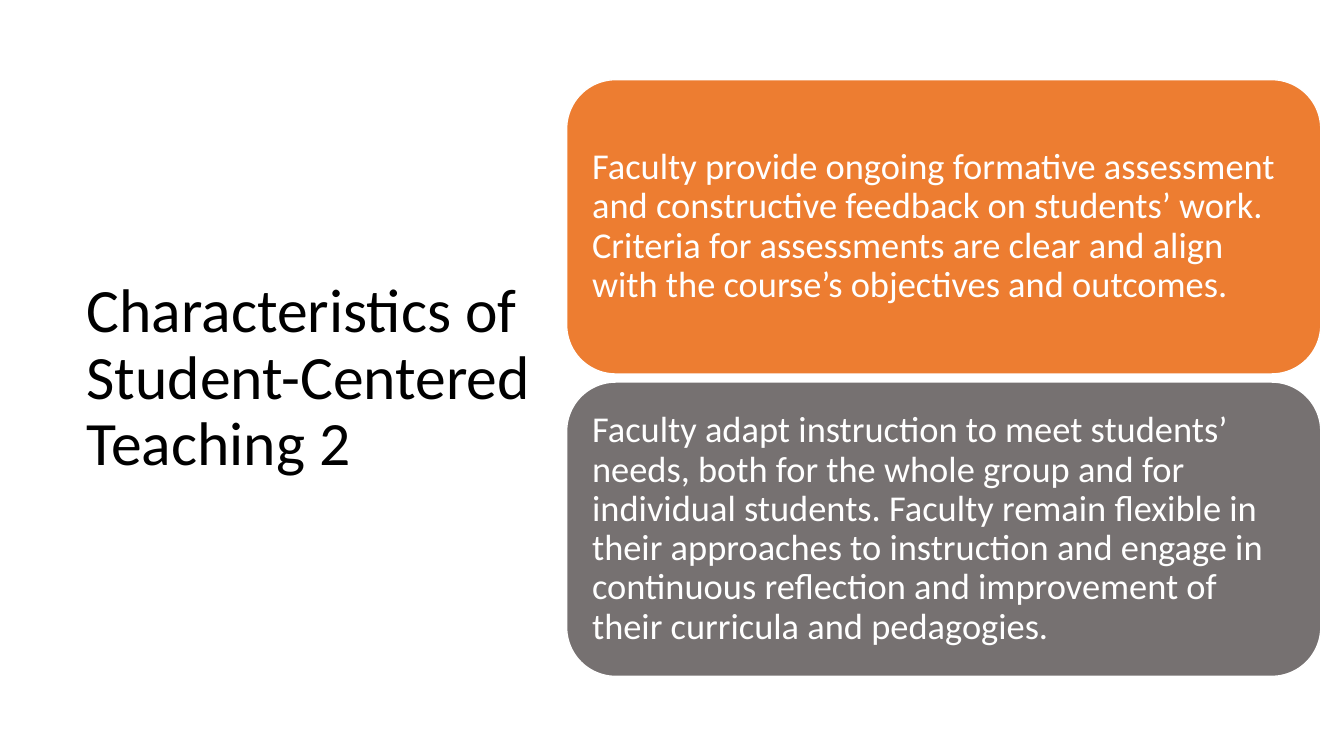
"""Build the slide on characteristics of student-centered teaching."""
from dataclasses import dataclass

from pptx import Presentation
from pptx.dml.color import RGBColor
from pptx.enum.shapes import MSO_SHAPE
from pptx.enum.text import MSO_ANCHOR, MSO_AUTO_SIZE, PP_ALIGN
from pptx.slide import Slide
from pptx.text.text import TextFrame
from pptx.util import Inches, Pt

ROUNDED = MSO_SHAPE.ROUNDED_RECTANGLE
MIDDLE = MSO_ANCHOR.MIDDLE
LEFT = PP_ALIGN.LEFT
NO_AUTOFIT = MSO_AUTO_SIZE.NONE

BLACK = RGBColor(0x00, 0x00, 0x00)
WHITE = RGBColor(0xFF, 0xFF, 0xFF)
ORANGE = RGBColor(0xED, 0x7D, 0x31)
GRAY = RGBColor(0x76, 0x71, 0x71)

FONT = "Calibri"
TITLE_ONLY = 5
CONTENT_TOP = 0.79
CARD_LEFT, CARD_WIDTH, CARD_HEIGHT = 5.62, 7.48, 2.92
CARD_PITCH = 3.0


@dataclass(frozen=True)
class Characteristic:
    text: str
    color: RGBColor


CHARACTERISTICS = [
    Characteristic(
        "Faculty provide ongoing formative assessment and constructive feedback "
        "on students’ work. Criteria for assessments are clear and align with "
        "the course’s objectives and outcomes.",
        ORANGE,
    ),
    Characteristic(
        "Faculty adapt instruction to meet students’ needs, both for the whole "
        "group and for individual students. Faculty remain flexible in their "
        "approaches to instruction and engage in continuous reflection and "
        "improvement of their curricula and pedagogies.",
        GRAY,
    ),
]


def write_text(frame: TextFrame, text: str, *, size: float, color: RGBColor,
               inset_x: float, inset_y: float) -> None:
    frame.word_wrap = True
    frame.auto_size = NO_AUTOFIT
    frame.vertical_anchor = MIDDLE
    frame.margin_left = frame.margin_right = Inches(inset_x)
    frame.margin_top = frame.margin_bottom = Inches(inset_y)
    paragraph = frame.paragraphs[0]
    paragraph.alignment = LEFT
    paragraph.line_spacing = 0.9
    paragraph.space_before = Pt(0)
    run = paragraph.add_run()
    run.text = text
    run.font.name = FONT
    run.font.size = Pt(size)
    run.font.color.rgb = color


def add_title(slide: Slide, text: str) -> None:
    title = slide.shapes.title
    title.left, title.top = Inches(0.76), Inches(CONTENT_TOP)
    title.width, title.height = Inches(5.92), Inches(5.95)
    write_text(title.text_frame, text, size=44, color=BLACK, inset_x=0.1, inset_y=0.05)


def add_card(slide: Slide, characteristic: Characteristic, top: float) -> None:
    card = slide.shapes.add_shape(ROUNDED, Inches(CARD_LEFT), Inches(top),
                                  Inches(CARD_WIDTH), Inches(CARD_HEIGHT))
    card.shadow.inherit = False
    card.fill.solid()
    card.fill.fore_color.rgb = characteristic.color
    card.line.color.rgb = WHITE
    card.line.width = Pt(1)
    write_text(card.text_frame, characteristic.text, size=26, color=WHITE,
               inset_x=0.11, inset_y=0.11)


def main() -> None:
    presentation = Presentation()
    presentation.slide_width = Inches(13.33)
    presentation.slide_height = Inches(7.5)
    slide = presentation.slides.add_slide(presentation.slide_layouts[TITLE_ONLY])
    add_title(slide, "Characteristics of Student-Centered Teaching 2")
    for index, characteristic in enumerate(CHARACTERISTICS):
        add_card(slide, characteristic, CONTENT_TOP + index * CARD_PITCH)
    presentation.save("out.pptx")


if __name__ == "__main__":
    main()
